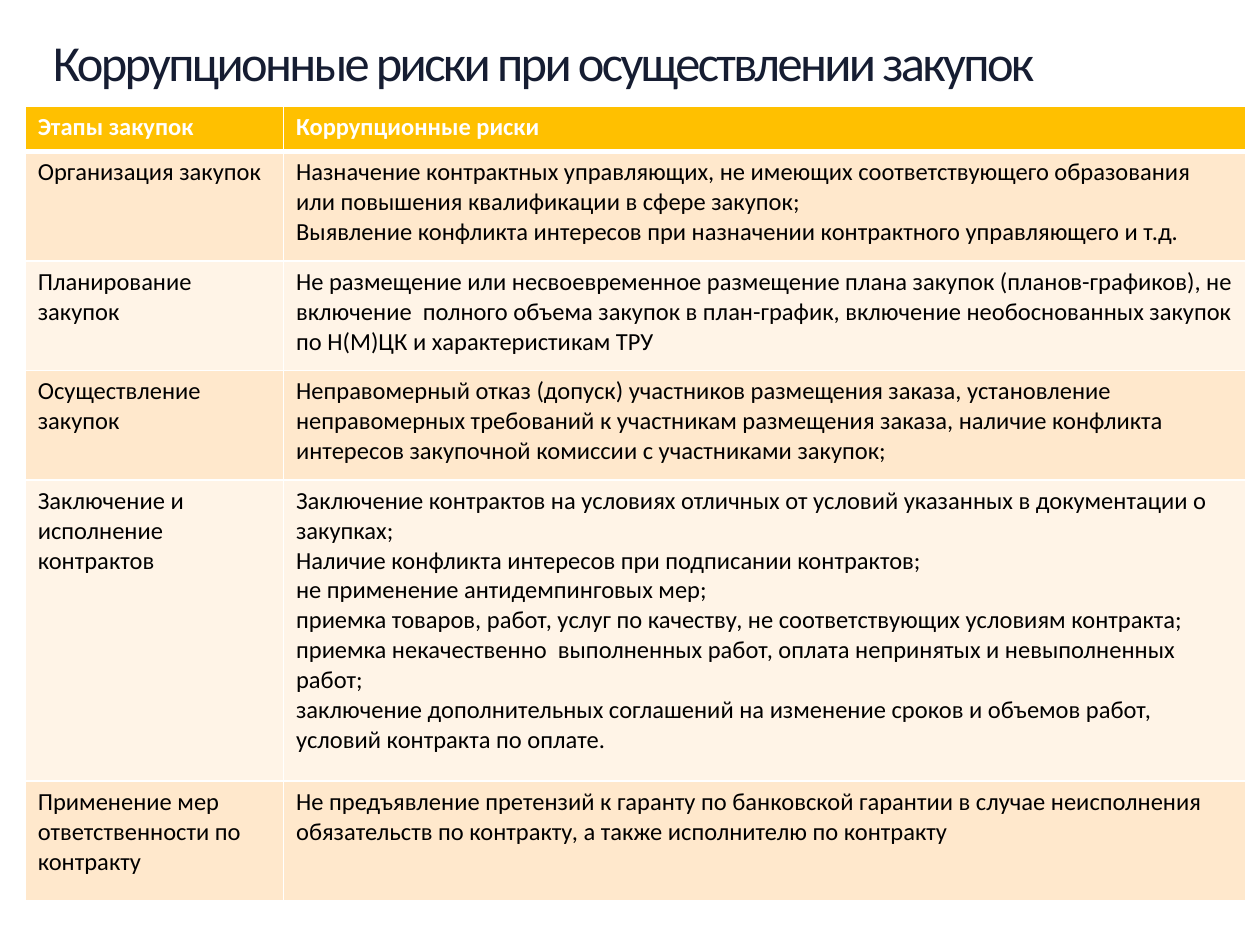
from pptx import Presentation
from pptx.dml.color import RGBColor as Rgb
from pptx.enum.text import MSO_ANCHOR as Anchor
from pptx.oxml import parse_xml
from pptx.oxml.ns import nsdecls
from pptx.util import Pt

SCALE = 9144  # EMU in one px, at 100 px to the inch
COLORS = {
    "title": "161D32",
    "head": "FFC000",
    "odd": "FFE8CC",
    "even": "FFF4E7",
    "text": "000000",
    "white": "FFFFFF",
}
COLS = [205, 764]
HEIGHTS = [36, 87, 87, 87, 239, 95]
ROWS = [
    ("Этапы закупок", ["Коррупционные риски"]),
    ("Организация закупок", [
        "Назначение контрактных управляющих, не имеющих соответствующего "
        "образования или повышения квалификации в сфере закупок;",
        "Выявление конфликта интересов при назначении контрактного "
        "управляющего и т.д.",
    ]),
    ("Планирование закупок", [
        "Не размещение или несвоевременное размещение плана закупок "
        "(планов-графиков), не включение  полного объема закупок в "
        "план-график, включение необоснованных закупок по Н(М)ЦК и "
        "характеристикам ТРУ",
    ]),
    ("Осуществление закупок", [
        "Неправомерный отказ (допуск) участников размещения заказа, "
        "установление неправомерных требований к участникам размещения "
        "заказа, наличие конфликта интересов закупочной комиссии с "
        "участниками закупок;",
    ]),
    ("Заключение и исполнение контрактов", [
        "Заключение контрактов на условиях отличных от условий указанных "
        "в документации о закупках;",
        "Наличие конфликта интересов при подписании контрактов;",
        "не применение антидемпинговых мер;",
        "приемка товаров, работ, услуг по качеству, не соответствующих "
        "условиям контракта;",
        "приемка некачественно  выполненных работ, оплата непринятых и "
        "невыполненных работ;",
        "заключение дополнительных соглашений на изменение сроков и "
        "объемов работ, условий контракта по оплате.",
    ]),
    ("Применение мер ответственности по контракту", [
        "Не предъявление претензий к гаранту по банковской гарантии в "
        "случае неисполнения обязательств по контракту, а также "
        "исполнителю по контракту",
    ]),
]


def px(n):
    return n * SCALE


class Deck:
    font = "Calibri"

    def __init__(self, wide, high):
        self.prs = Presentation()
        self.prs.slide_width, self.prs.slide_height = px(wide), px(high)
        self.slide = self.prs.slides.add_slide(self.prs.slide_layouts[6])

    def run(self, para, text, size, color, bold=False):
        run = para.add_run()
        run.text = text
        run.font.name, run.font.size, run.font.bold = self.font, Pt(size), bold
        run.font.color.rgb = Rgb.from_string(COLORS[color])
        return run

    def title(self, text, x, y, w, h):
        frame = self.slide.shapes.add_textbox(px(x), px(y), px(w), px(h)).text_frame
        frame.word_wrap = True
        frame.vertical_anchor = Anchor.TOP
        frame.margin_left = frame.margin_right = 0
        frame.margin_top = frame.margin_bottom = 0
        para = frame.paragraphs[0]
        para.line_spacing = 0.9
        run = self.run(para, text, 28.8, "title")
        run.font._element.set("spc", "-150")

    def edge(self, cell, side, width):
        cell._tc.get_or_add_tcPr().append(parse_xml(
            f'<a:ln{side} {nsdecls("a")} w="{Pt(width)}"><a:solidFill>'
            f'<a:srgbClr val="{COLORS["white"]}"/></a:solidFill></a:ln{side}>'))

    def cell(self, cell, lines, row):
        head = row == 0
        widths = {"L": 1, "R": 1, "T": 3 if row == 1 else 1, "B": 3 if head else 1}
        for side, width in widths.items():
            self.edge(cell, side, width)
        fill = "head" if head else "odd" if row % 2 else "even"
        cell.fill.solid()
        cell.fill.fore_color.rgb = Rgb.from_string(COLORS[fill])
        frame = cell.text_frame
        for i, line in enumerate(lines):
            para = frame.add_paragraph() if i else frame.paragraphs[0]
            self.run(para, line, 14, "white" if head else "text", head)

    def table(self, rows, x, y, cols, heights):
        table = self.slide.shapes.add_table(
            len(rows), len(cols), px(x), px(y), px(sum(cols)), px(sum(heights))).table
        for col, w in zip(table.columns, cols):
            col.width = px(w)
        for i, (stage, risks) in enumerate(rows):
            table.rows[i].height = px(heights[i])
            self.cell(table.cell(i, 0), [stage], i)
            self.cell(table.cell(i, 1), risks, i)


def main():
    deck = Deck(1000, 750)
    deck.title("Коррупционные риски при осуществлении закупок", 42, 30, 917, 54)
    deck.table(ROWS, 20, 84, COLS, HEIGHTS)
    deck.prs.save("out.pptx")


if __name__ == "__main__":
    main()
